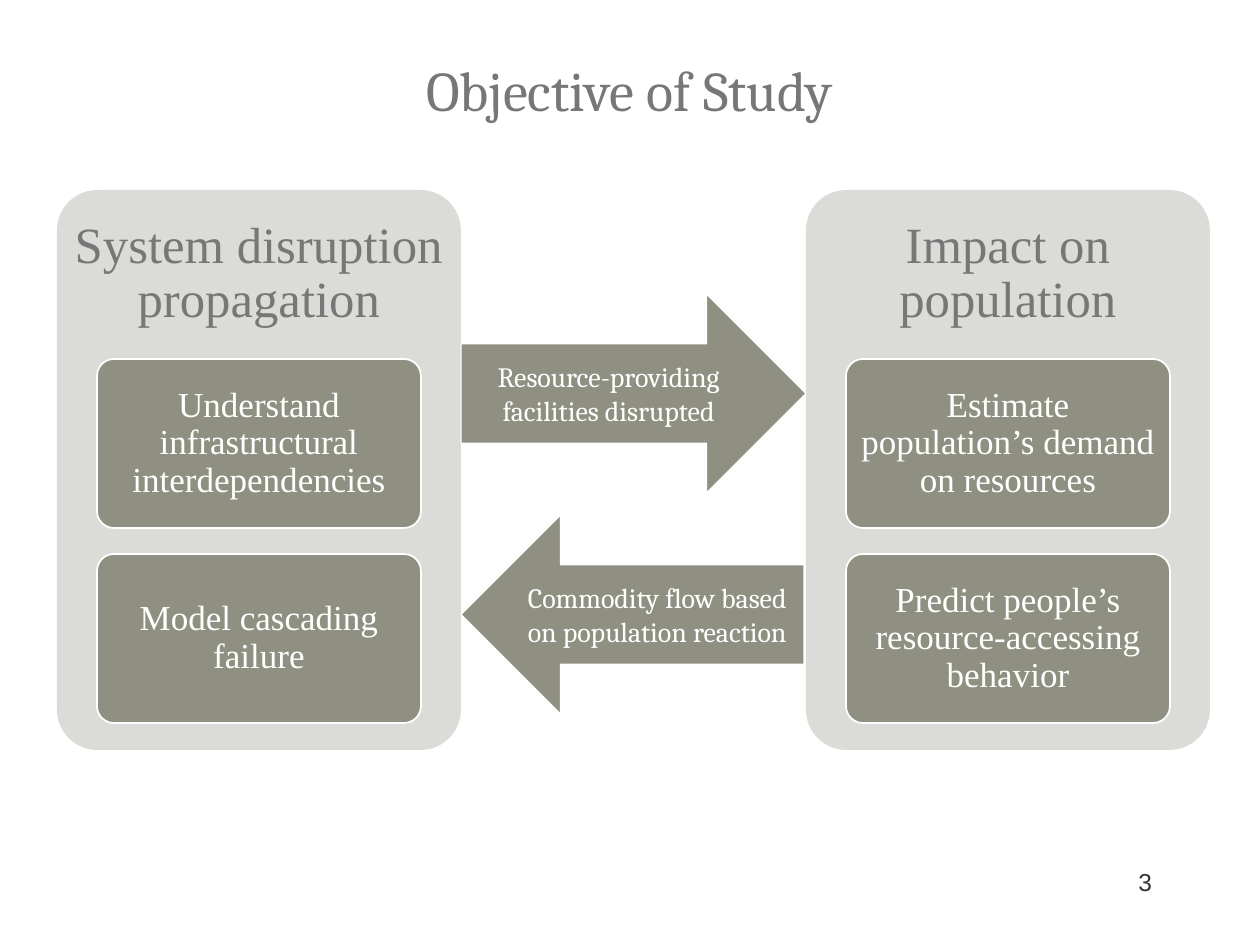
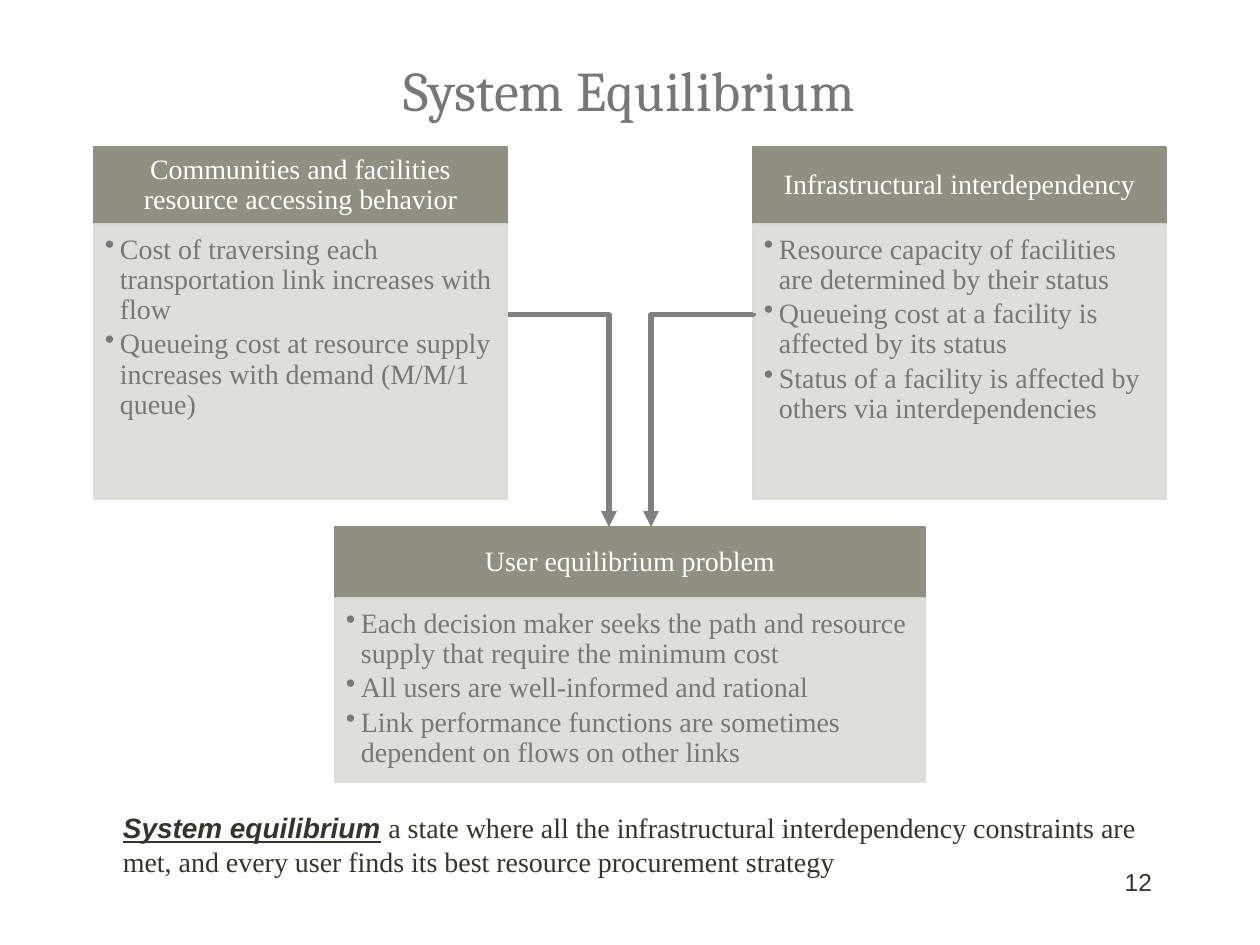
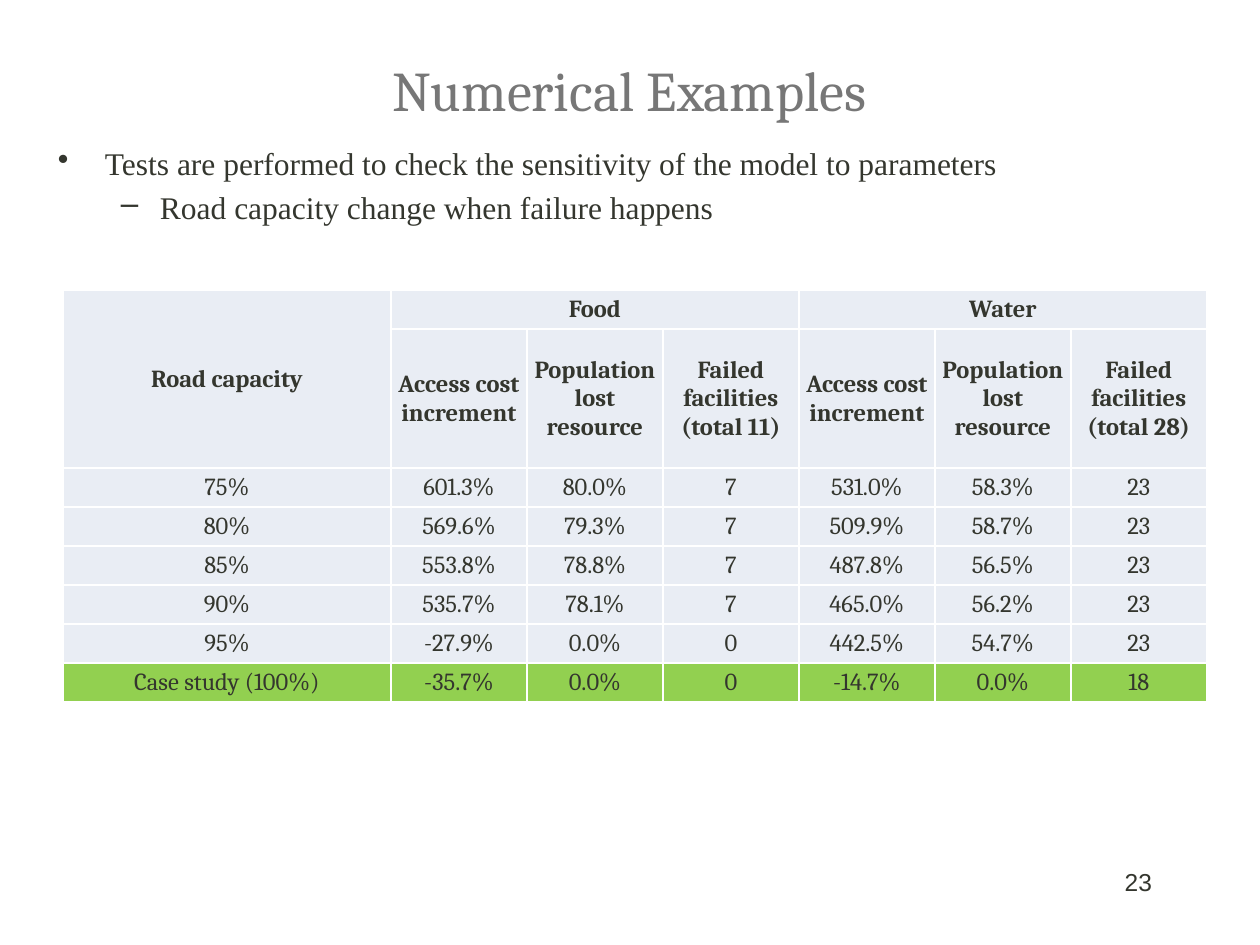
from pptx import Presentation
from pptx.dml.color import RGBColor
from pptx.enum.shapes import MSO_CONNECTOR, MSO_SHAPE
from pptx.enum.text import MSO_ANCHOR, PP_ALIGN
from pptx.oxml.ns import qn
from pptx.oxml.xmlchemy import OxmlElement
from pptx.util import Emu, Pt

# Shared look
EMU_PER_INCH = 914400
PX_PER_INCH = 126
DARK = RGBColor(0x34, 0x36, 0x2E)
GREY = RGBColor(0x77, 0x77, 0x77)
ARROW_GREY = RGBColor(0x80, 0x80, 0x80)
OLIVE = RGBColor(0x90, 0x90, 0x82)
PALE = RGBColor(0xDB, 0xDB, 0xD8)
WHITE = RGBColor(0xFF, 0xFF, 0xFF)
CELL_BLUE = RGBColor(0xE9, 0xED, 0xF4)
CASE_GREEN = RGBColor(0x92, 0xD0, 0x50)
SERIF, SANS, HEADING = "Times New Roman", "Arial", "Cambria"

LEFT, CENTER, RIGHT = PP_ALIGN.LEFT, PP_ALIGN.CENTER, PP_ALIGN.RIGHT
TOP, MIDDLE = MSO_ANCHOR.TOP, MSO_ANCHOR.MIDDLE
RECTANGLE = MSO_SHAPE.RECTANGLE
ROUNDED = MSO_SHAPE.ROUNDED_RECTANGLE
RIGHT_ARROW, LEFT_ARROW = MSO_SHAPE.RIGHT_ARROW, MSO_SHAPE.LEFT_ARROW
ELBOW = MSO_CONNECTOR.ELBOW

DEFAULT_INSETS = (13, 6, 13, 6)


def px(length):
    return Emu(round(length * EMU_PER_INCH / PX_PER_INCH))


def add_child(parent, tag, **attributes):
    child = OxmlElement(tag)
    for name, value in attributes.items():
        child.set(name, str(value))
    parent.append(child)
    return child


# Text
def style_run(run, size, color, font, bold=False):
    run.font.size = Pt(size)
    run.font.name = font
    run.font.color.rgb = color
    run.font.bold = bold


def write(frame, text, size, color, font, align=LEFT, anchor=TOP,
          insets=DEFAULT_INSETS, line_spacing=None, space_after=None):
    frame.word_wrap = True
    frame.vertical_anchor = anchor
    (frame.margin_left, frame.margin_top,
     frame.margin_right, frame.margin_bottom) = map(px, insets)
    frame.text = text
    for para in frame.paragraphs:
        para.alignment = align
        if line_spacing:
            para.line_spacing = line_spacing
        if space_after:
            para.space_after = Pt(space_after)
        for run in para.runs:
            style_run(run, size, color, font)


def add_bullet(para, char, indent, hanging):
    properties = para._p.get_or_add_pPr()
    properties.set("marL", str(px(indent)))
    properties.set("indent", str(-px(hanging)))
    add_child(properties, "a:buChar", char=char)


def add_text(slide, place, text, size, color, font, **layout):
    box = slide.shapes.add_textbox(*map(px, place))
    write(box.text_frame, text, size, color, font, **layout)
    return box.text_frame


# Slide parts
def add_slide(deck, title, number):
    slide = deck.slides.add_slide(deck.slide_layouts[6])
    add_text(slide, (94, 10, 1071, 158), title, 32, GREY, HEADING,
             align=CENTER, anchor=MIDDLE)
    add_text(slide, (903, 861, 262, 63), number, 14, DARK, SANS, align=RIGHT)
    return slide


def add_box(slide, kind, place, fill, line=None, line_width=1.0):
    box = slide.shapes.add_shape(kind, *map(px, place))
    box.shadow.inherit = False
    box.fill.solid()
    box.fill.fore_color.rgb = fill
    if line is None:
        box.line.fill.background()
    else:
        box.line.color.rgb = line
        box.line.width = Pt(line_width)
    return box


def add_topic_panel(slide, left, heading, steps):
    panel = add_box(slide, ROUNDED, (left, 190, 404, 560), PALE)
    panel.adjustments[0] = 0.1
    write(panel.text_frame, heading, 29, GREY, SERIF, CENTER, MIDDLE,
          (3, 3, 3, 395), 0.9, 10.15)
    for index, step in enumerate(steps):
        card = add_box(slide, ROUNDED, (left + 40, 359 + 195 * index, 324, 169),
                       OLIVE, WHITE)
        card.adjustments[0] = 0.1
        write(card.text_frame, step, 20, WHITE, SERIF, CENTER, MIDDLE,
              (6, 5, 6, 5), 0.9, 7)


def add_block_arrow(slide, kind, place, text):
    arrow = add_box(slide, kind, place, OLIVE, WHITE, 0.75)
    write(arrow.text_frame, text, 16, WHITE, HEADING, CENTER, MIDDLE)


def add_list_card(slide, place, header_height, heading, points):
    left, top, width, height = place
    header = add_box(slide, RECTANGLE, (left, top, width, header_height),
                     OLIVE, OLIVE)
    write(header.text_frame, heading, 16, WHITE, SERIF, CENTER, MIDDLE,
          (15, 9, 15, 9), 0.9, 5.6)
    body = add_box(slide, RECTANGLE, (left, top + header_height, width,
                                      height - header_height), PALE, PALE)
    for color in body._element.spPr.iter(qn("a:srgbClr")):
        add_child(color, "a:alpha", val=90000)
    write(body.text_frame, "\n".join(points), 16, GREY, SERIF,
          insets=(11, 11, 15, 17), line_spacing=0.9, space_after=2.4)
    for para in body.text_frame.paragraphs:
        add_bullet(para, "•", 15, 15)


def add_elbow_arrow(slide, start, end):
    """Run sideways from start, then down to end, as a turned elbow."""
    (start_x, start_y), (end_x, end_y) = start, end
    length, reach = end_y - start_y, abs(end_x - start_x)
    left = (start_x + end_x - length) / 2
    top = (start_y + end_y - reach) / 2
    sides = [left, left + length]
    rotation = 90
    if end_x > start_x:
        sides.reverse()
        rotation = 270
    arrow = slide.shapes.add_connector(ELBOW, px(sides[0]), px(top),
                                       px(sides[1]), px(top + reach))
    arrow.line.color.rgb = ARROW_GREY
    arrow.line.width = Pt(3)
    add_child(arrow.line._get_or_add_ln(), "a:tailEnd", type="triangle")
    properties = arrow._element.spPr
    properties.find(qn("a:xfrm")).set("rot", str(rotation * 60000))
    bends = properties.find(qn("a:prstGeom")).get_or_add_avLst()
    add_child(bends, "a:gd", name="adj1", fmla="val 900")
    add_child(properties, "a:effectLst")


# Table
def style_cell(cell, text, fill, bold):
    properties = cell._tc.get_or_add_tcPr()
    for side in ("a:lnL", "a:lnR", "a:lnT", "a:lnB"):
        border = add_child(properties, side, w=Pt(1))
        add_child(add_child(border, "a:solidFill"), "a:srgbClr", val=WHITE)
    cell.fill.solid()
    cell.fill.fore_color.rgb = fill
    cell.vertical_anchor = MIDDLE
    cell.margin_left = cell.margin_top = cell.margin_right = px(1)
    cell.margin_bottom = 0
    cell.text_frame.text = text
    for para in cell.text_frame.paragraphs:
        para.alignment = CENTER
        for run in para.runs:
            style_run(run, 14, DARK, HEADING, bold)


def add_results_table(slide, rows, widths, heights):
    frame = slide.shapes.add_table(len(rows), len(widths), px(63), px(290),
                                   px(sum(widths)), px(sum(heights)))
    table = frame.table
    table.first_row = table.horz_banding = False
    for column, width in zip(table.columns, widths):
        column.width = px(width)
    for row, height in zip(table.rows, heights):
        row.height = px(height)
    for row_index, values in enumerate(rows):
        fill = CASE_GREEN if row_index == len(rows) - 1 else CELL_BLUE
        for column_index, value in enumerate(values):
            style_cell(table.cell(row_index, column_index), value, fill,
                       bold=row_index < 2)
    table.cell(0, 0).merge(table.cell(1, 0))
    for first in (1, 4):
        table.cell(0, first).merge(table.cell(0, first + 2))


# Slides
def build_objective(deck):
    slide = add_slide(deck, "Objective of Study", "3")
    add_topic_panel(slide, 57, "System disruption propagation", [
        "Understand infrastructural interdependencies",
        "Model cascading failure"])
    add_topic_panel(slide, 806, "Impact on population", [
        "Estimate population’s demand on resources",
        "Predict people’s resource-accessing behavior"])
    add_block_arrow(slide, RIGHT_ARROW, (461, 294, 345, 199),
                    "Resource-providing facilities disrupted")
    add_block_arrow(slide, LEFT_ARROW, (461, 515, 343, 199),
                    "Commodity flow based on population reaction")


def build_equilibrium(deck):
    slide = add_slide(deck, "System Equilibrium", "12")
    add_elbow_arrow(slide, (507, 313), (609, 527))
    add_list_card(
        slide, (94, 147, 413, 352), 77,
        "Communities and facilities resource accessing behavior",
        ["Cost of traversing each transportation link increases with flow",
         "Queueing cost at resource supply increases with demand (M/M/1 queue)"])
    add_list_card(
        slide, (335, 527, 590, 255), 71, "User equilibrium problem",
        ["Each decision maker seeks the path and resource supply that require "
         "the minimum cost",
         "All users are well-informed and rational",
         "Link performance functions are sometimes dependent on flows on "
         "other links"])
    add_list_card(
        slide, (753, 147, 413, 352), 77, "Infrastructural interdependency",
        ["Resource capacity of facilities are determined by their status",
         "Queueing cost at a facility is affected by its status",
         "Status of a facility is affected by others via interdependencies"])
    add_elbow_arrow(slide, (753, 313), (651, 527))

    # Definition
    frame = add_text(slide, (110, 805, 1056, 81), "System equilibrium",
                     16, DARK, SANS)
    para = frame.paragraphs[0]
    term = para.runs[0].font
    term.bold = term.italic = term.underline = True
    for text, font in (
            (" ", SANS),
            ("a state where all the infrastructural interdependency constraints "
             "are met, and every user finds its best resource procurement "
             "strategy", SERIF)):
        span = para.add_run()
        span.text = text
        style_run(span, 16, DARK, font)


def build_examples(deck):
    slide = add_slide(deck, "Numerical Examples", "23")
    frame = add_text(
        slide, (45, 132, 1178, 144),
        "Tests are performed to check the sensitivity of the model to parameters\n"
        "Road capacity change when failure happens",
        18, DARK, SERIF, insets=(13, 12, 13, 6))
    test, change = frame.paragraphs
    add_bullet(test, "•", 47, 47)
    change.level = 1
    change.space_before = Pt(3.6)
    add_bullet(change, "–", 102, 39)

    measures = ["Access cost increment", "Population lost resource"]
    rows = [
        ["Road capacity", "Food", "", "", "Water", "", ""],
        ["", *measures, "Failed facilities\n(total 11)",
         *measures, "Failed facilities\n(total 28)"],
        ["75%", "601.3%", "80.0%", "7", "531.0%", "58.3%", "23"],
        ["80%", "569.6%", "79.3%", "7", "509.9%", "58.7%", "23"],
        ["85%", "553.8%", "78.8%", "7", "487.8%", "56.5%", "23"],
        ["90%", "535.7%", "78.1%", "7", "465.0%", "56.2%", "23"],
        ["95%", "-27.9%", "0.0%", "0", "442.5%", "54.7%", "23"],
        ["Case study (100%)", "-35.7%", "0.0%", "0", "-14.7%", "0.0%", "18"],
    ]
    add_results_table(slide, rows, [328] + [136] * 6, [39, 139] + [39] * 6)


def main():
    deck = Presentation()
    deck.slide_width, deck.slide_height = px(1260), px(945)
    build_objective(deck)
    build_equilibrium(deck)
    build_examples(deck)
    deck.save("out.pptx")


if __name__ == "__main__":
    main()
